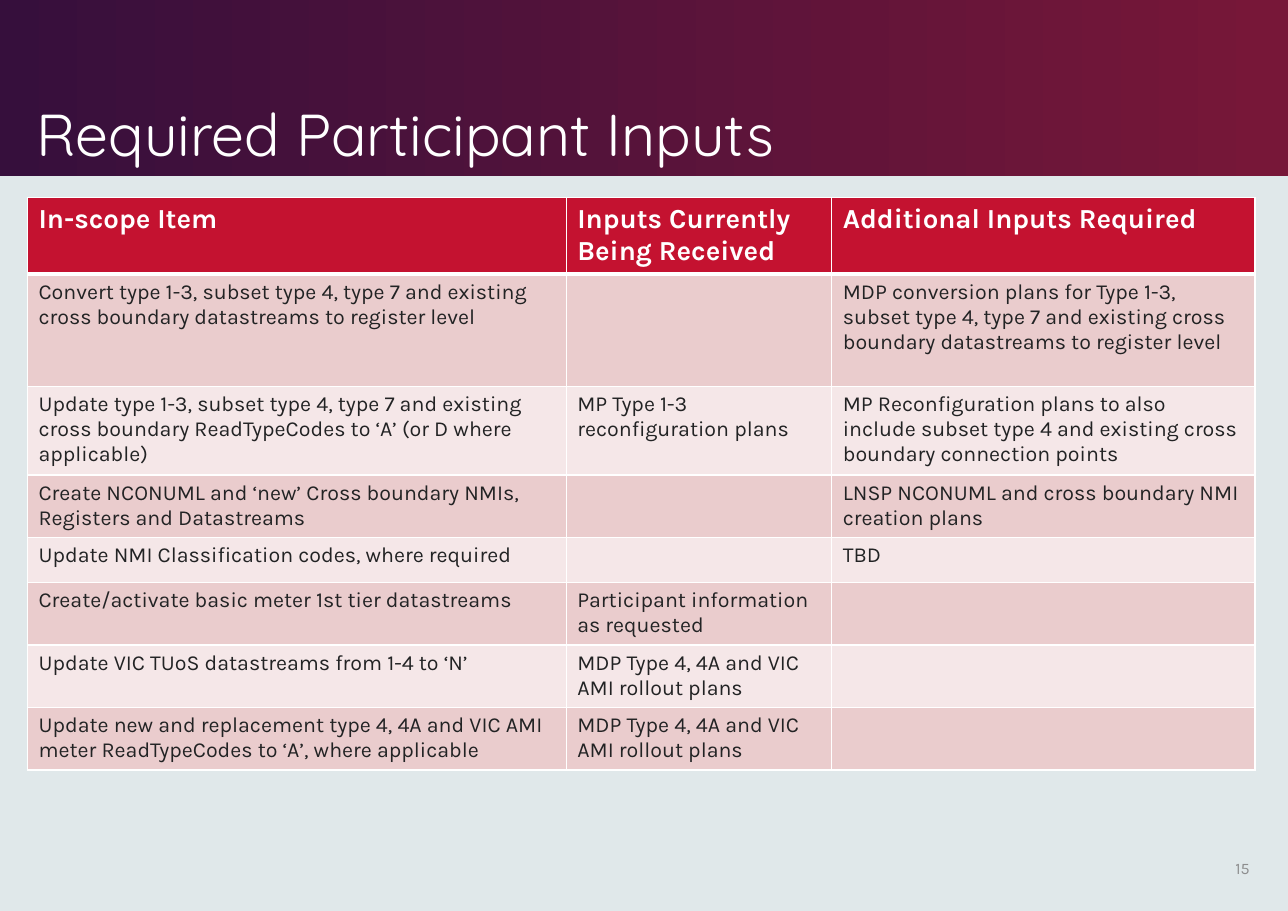
"""Build the Required Participant Inputs slide."""
from lxml import etree
from pptx import Presentation
from pptx.dml.color import RGBColor
from pptx.enum.shapes import MSO_SHAPE
from pptx.enum.text import MSO_ANCHOR, MSO_AUTO_SIZE, PP_ALIGN
from pptx.oxml.ns import qn
from pptx.util import Inches, Pt

RECT = MSO_SHAPE.RECTANGLE
LEFT, RIGHT = PP_ALIGN.LEFT, PP_ALIGN.RIGHT
TOP, MIDDLE, BOTTOM = MSO_ANCHOR.TOP, MSO_ANCHOR.MIDDLE, MSO_ANCHOR.BOTTOM
NO_FIT = MSO_AUTO_SIZE.NONE
WIDTH, HEIGHT = 11.69, 8.27
HEADER_FILL, BANDS = "C41230", ("EACCCD", "F5E7E8")
COL_WIDTHS = (4.89, 2.41, 3.84)
ROW_HEIGHTS = (0.68, 1.02, 0.78, 0.55, 0.41, 0.55, 0.55, 0.55)
ROWS = (
    ("In-scope Item", "Inputs Currently Being Received", "Additional Inputs Required"),
    ("Convert type 1-3, subset type 4, type 7 and existing cross boundary datastreams to register level",
     "",
     "MDP conversion plans for Type 1-3, subset type 4, type 7 and existing cross boundary datastreams to register level"),
    ("Update type 1-3, subset type 4, type 7 and existing cross boundary ReadTypeCodes to ‘A’ (or D where applicable)",
     "MP Type 1-3 reconfiguration plans",
     "MP Reconfiguration plans to also include subset type 4 and existing cross boundary connection points"),
    ("Create NCONUML and ‘new’ Cross boundary NMIs, Registers and Datastreams",
     "",
     "LNSP NCONUML and cross boundary NMI creation plans"),
    ("Update NMI Classification codes, where required", "", "TBD"),
    ("Create/activate basic meter 1st tier datastreams", "Participant information as requested", ""),
    ("Update VIC TUoS datastreams from 1-4 to ‘N’", "MDP Type 4, 4A and VIC AMI rollout plans", ""),
    ("Update new and replacement type 4, 4A and VIC AMI meter ReadTypeCodes to ‘A’, where applicable",
     "MDP Type 4, 4A and VIC AMI rollout plans", ""),
)


def rgb(color):
    return RGBColor.from_string(color)


def write(tf, text, size, color, font="Karla", bold=False, align=LEFT, anchor=TOP):
    tf.word_wrap = True
    tf.vertical_anchor = anchor
    p = tf.paragraphs[0]
    p.alignment = align
    p.font.size = Pt(size)
    if text:
        r = p.add_run()
        r.text = text
        r.font.name, r.font.size, r.font.bold = font, Pt(size), bold
        r.font.color.rgb = rgb(color)
    return p


prs = Presentation()
prs.slide_width, prs.slide_height = Inches(WIDTH), Inches(HEIGHT)
s = prs.slides.add_slide(prs.slide_layouts[5])
s.background.fill.solid()
s.background.fill.fore_color.rgb = rgb("E0E8EA")

title = s.shapes.title
title.left, title.top = Inches(0.23), Inches(0.16)
title.width, title.height = Inches(9.89), Inches(1.43)
title.text_frame.auto_size = NO_FIT
p = write(title.text_frame, "Required Participant Inputs", 38.6, "FFFFFF", font="Quicksand", anchor=BOTTOM)
p.line_spacing = 0.9

band = s.shapes.add_shape(RECT, 0, 0, prs.slide_width, Inches(1.6))
band.shadow.inherit = False
band.line.fill.background()
band.fill.gradient()
band.fill.gradient_angle = 0
for stop, position, color in zip(band.fill.gradient_stops, (0, 0.99), ("360F3C", "771738")):
    stop.position = position
    stop.color.rgb = rgb(color)
title.element.addprevious(band.element)

number = s.shapes.add_textbox(Inches(10.89), Inches(7.66), Inches(0.55), Inches(0.44))
write(number.text_frame, "15", 10.5, "8D8D8E", align=RIGHT, anchor=MIDDLE)

frame = s.shapes.add_table(len(ROWS), len(COL_WIDTHS), Inches(0.25), Inches(1.79),
                           Inches(sum(COL_WIDTHS)), Inches(sum(ROW_HEIGHTS)))
table = frame.table
for column, width in zip(table.columns, COL_WIDTHS):
    column.width = Inches(width)
for i, (row, height, texts) in enumerate(zip(table.rows, ROW_HEIGHTS, ROWS)):
    row.height = Inches(height)
    header = i == 0
    for cell, text in zip(row.cells, texts):
        write(cell.text_frame, text, 18 if header else 14, "FFFFFF" if header else "222324", bold=header)
        tcPr = cell._tc.get_or_add_tcPr()
        for side in "LRTB":
            thick = (header and side == "B") or (i == 1 and side == "T")
            ln = etree.SubElement(tcPr, qn(f"a:ln{side}"), w=str(Pt(3 if thick else 1)))
            fill = etree.SubElement(ln, qn("a:solidFill"))
            etree.SubElement(fill, qn("a:srgbClr"), val="FFFFFF")
        cell.fill.solid()
        cell.fill.fore_color.rgb = rgb(HEADER_FILL if header else BANDS[(i - 1) % 2])

prs.save("out.pptx")
